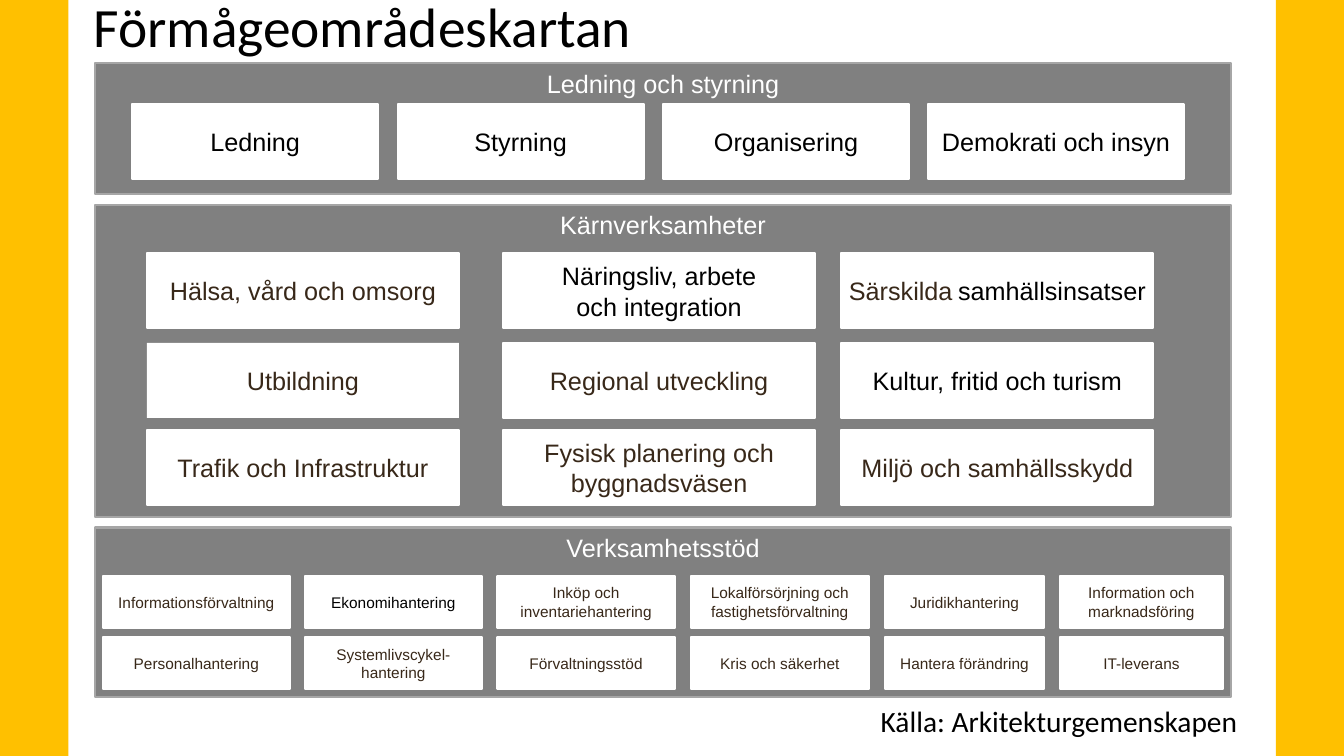
from pptx import Presentation
from pptx.dml.color import RGBColor
from pptx.enum.shapes import MSO_SHAPE as Shape
from pptx.enum.text import MSO_ANCHOR as Anchor, PP_ALIGN as Align
from pptx.util import Pt

WHITE = RGBColor(0xFF, 0xFF, 0xFF)
BLACK = RGBColor(0x00, 0x00, 0x00)
BROWN = RGBColor(0x38, 0x28, 0x19)
GREY = RGBColor(0x80, 0x80, 0x80)
LIGHT_GREY = RGBColor(0xA6, 0xA6, 0xA6)
YELLOW = RGBColor(0xFF, 0xC0, 0x00)

prs = Presentation()
prs.slide_width, prs.slide_height = Pt(960), Pt(540)
slide = prs.slides.add_slide(prs.slide_layouts[6])


def style(run, size, color, font="Arial"):
    run.font.name, run.font.size = font, Pt(size)
    run.font.color.rgb = color


def add_box(left, top, width, height, fill, line=None, text="", size=18,
            color=BROWN, anchor=Anchor.MIDDLE, side_inset=7.2):
    box = slide.shapes.add_shape(Shape.RECTANGLE, Pt(left), Pt(top), Pt(width), Pt(height))
    box.shadow.inherit = False
    box.fill.solid()
    box.fill.fore_color.rgb = fill
    if line is None:
        box.line.fill.background()
    else:
        box.line.color.rgb, box.line.width = line, Pt(1.5)
    frame = box.text_frame
    frame.word_wrap, frame.vertical_anchor = True, anchor
    frame.margin_left = frame.margin_right = Pt(side_inset)
    frame.text = text
    paragraph = frame.paragraphs[0]
    paragraph.alignment = Align.CENTER
    for run in paragraph.runs:
        style(run, size, color)
    return box


# Grey panels with their headings
for heading, top, height in [("Ledning och styrning", 45.2, 93.6),
                             ("Kärnverksamheter", 146.2, 223.4),
                             ("Verksamhetsstöd", 376.8, 121)]:
    add_box(67.8, top, 811.6, height, GREY, LIGHT_GREY, heading, color=WHITE, anchor=Anchor.TOP)

# Management and governance
for column, area in enumerate(["Ledning", "Styrning", "Organisering", "Demokrati och insyn"]):
    width = 182.2 if area == "Demokrati och insyn" else 175.8
    add_box(94.4 + 189.6 * column, 74.3, width, 53.5, WHITE, WHITE, area, color=BLACK)

# Core activities
core_columns = [105, 359.4, 601]
core_rows = [
    (181, ["Hälsa, vård och omsorg", "Näringsliv, arbete\voch integration", "Särskilda"]),
    (245, ["Utbildning", "Regional utveckling", "Kultur, fritid och turism"]),
    (307, ["Trafik och Infrastruktur", "Fysisk planering och byggnadsväsen",
           "Miljö och samhällsskydd"]),
]
black_areas = {"Näringsliv, arbete\voch integration", "Kultur, fritid och turism",
               "Ekonomihantering"}
for top, areas in core_rows:
    for left, area in zip(core_columns, areas):
        special = area == "Särskilda"
        core_box = add_box(left, top, 222.8, 53.5, WHITE,
                           None if area == "Utbildning" else WHITE, area,
                           color=BLACK if area in black_areas else BROWN,
                           side_inset=0 if special else 7.2)
        if special:
            for word, size, color in [(" ", 14, BROWN), ("samhällsinsatser", 18, BLACK)]:
                run = core_box.text_frame.paragraphs[0].add_run()
                run.text = word
                style(run, size, color)

# Support functions: left, width, upper and lower area
support_columns = [
    (73.4, 133.8, "Informationsförvaltning", "Personalhantering"),
    (217.8, 126.4, "Ekonomihantering", "Systemlivscykel-hantering"),
    (355.4, 126.6, "Inköp och inventariehantering", "Förvaltningsstöd"),
    (493.4, 127.4, "Lokalförsörjning och fastighetsförvaltning", "Kris och säkerhet"),
    (632.2, 113.6, "Juridikhantering", "Hantera förändring"),
    (757, 116.8, "Information och marknadsföring", "IT-leverans"),
]
for left, width, *areas in support_columns:
    for row, area in enumerate(areas):
        add_box(left, 411.2 + 43.8 * row, width, 37.4, WHITE, WHITE, area, 11,
                BLACK if area in black_areas else BROWN, side_inset=0)

# Yellow side bands
for left in (0, 911.4):
    add_box(left, 0, 48.8, 540, YELLOW)

# Title and source
for text, left, top, width, height, size, spacing in [
        ("Förmågeområdeskartan", 59.8, 1.4, 828, 38.9, 39.6, 0.9),
        ("Källa: Arkitekturgemenskapen", 622, 501.1, 310.3, 27.4, 21, 1)]:
    frame = slide.shapes.add_textbox(Pt(left), Pt(top), Pt(width), Pt(height)).text_frame
    frame.word_wrap = True
    frame.vertical_anchor = Anchor.MIDDLE
    frame.text = text
    frame.paragraphs[0].line_spacing = spacing
    style(frame.paragraphs[0].runs[0], size, BLACK, "Calibri")

prs.save("out.pptx")
